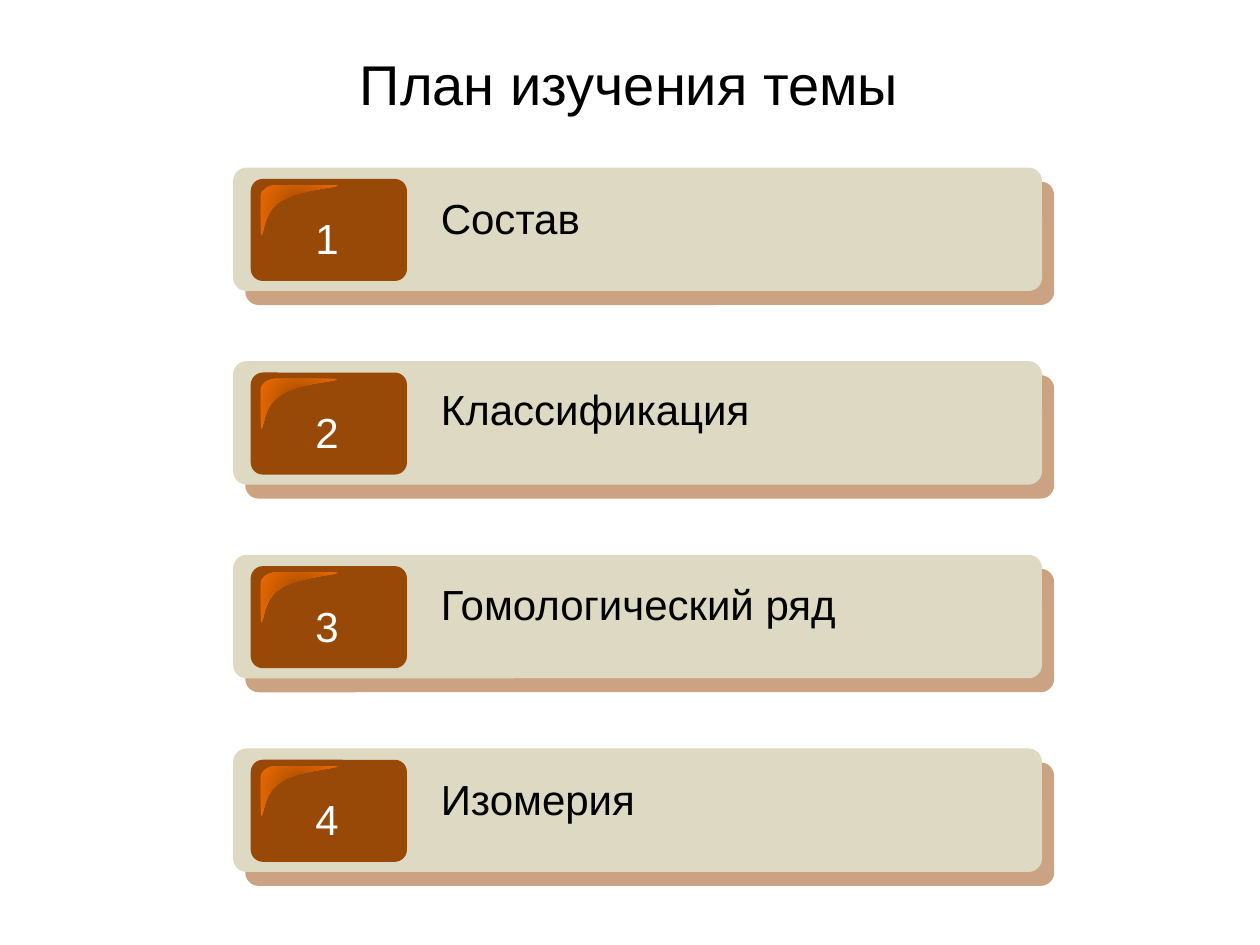
from typing import NamedTuple

from lxml.etree import SubElement
from pptx import Presentation
from pptx.dml.color import RGBColor
from pptx.enum.shapes import MSO_SHAPE as Preset
from pptx.enum.text import MSO_ANCHOR as Anchor, MSO_AUTO_SIZE as AutoSize, PP_ALIGN as Align
from pptx.oxml import parse_xml
from pptx.oxml.ns import nsdecls, qn
from pptx.util import Inches, Pt

BLACK = RGBColor(0x00, 0x00, 0x00)
WHITE = RGBColor(0xFF, 0xFF, 0xFF)
SAND = RGBColor(0xDD, 0xD9, 0xC3)
BROWN = RGBColor(0x98, 0x48, 0x07)
GLOSS_STOPS = (
    (0, RGBColor(0x8D, 0x40, 0x00)),
    (50, RGBColor(0xC8, 0x5B, 0x00)),
    (100, RGBColor(0xEE, 0x6B, 0x00)),
)


class Area(NamedTuple):
    """A place in inches; inside a row it is measured from the row's corner."""
    left: float
    top: float
    width: float
    height: float

    def in_row(self, row: int) -> "Area":
        return self._replace(left=ROW_LEFT + self.left,
                             top=FIRST_TOP + row * ROW_PITCH + self.top)

    def emu(self) -> list:
        return [Inches(value) for value in self]


class Topic(NamedTuple):
    text: str
    label_top: float


TOPICS = (
    Topic("Состав", 0.15),
    Topic("Классификация", 0.13),
    Topic("Гомологический ряд", 0.14),
    Topic("Изомерия", 0.15),
)
FIRST_TOP, LAST_TOP = 1.33, 5.94
ROW_PITCH = (LAST_TOP - FIRST_TOP) / (len(TOPICS) - 1)
ROW_LEFT = 1.85

TITLE = Area(1.95, 0.3, 6.09, 0.72)
BAR = Area(0, 0, 6.42, 0.98)
BADGE = Area(0.14, 0.09, 1.24, 0.81)
GLOSS = Area(0.22, 0.14, 0.62, 0.4)
NUMBER = Area(0.55, 0.31, 0.39, 0.51)
LABEL = Area(1.55, 0, 4.72, 0.51)

# Outline of the gloss from its own corner: a straight edge has one point,
# a Bézier curve has two handles and an end
GLOSS_START = (0.12, 0)
GLOSS_EDGES = (
    ((0.06, 0), (0, 0.04), (0, 0.08)),
    ((0, 0.4),),
    ((0.03, 0.4), (0.01, 0.21), (0.17, 0.12)),
    ((0.32, 0.03), (0.62, 0.02), (0.61, 0)),
)


def write(frame, text: str, *, size: float, color: RGBColor, align=Align.LEFT) -> None:
    para = frame.paragraphs[0]
    para.alignment = align
    span = para.add_run()
    span.text = text
    span.font.name = "Arial"
    span.font.size = Pt(size)
    span.font.color.rgb = color


def add_text(shapes, area: Area, text: str, *, wrap: bool, **style) -> None:
    frame = shapes.add_textbox(*area.emu()).text_frame
    frame.word_wrap = wrap
    frame.auto_size = AutoSize.SHAPE_TO_FIT_TEXT
    write(frame, text, size=24, **style)


def add_rounded(shapes, area: Area, color: RGBColor, rounding: float):
    box = shapes.add_shape(Preset.ROUNDED_RECTANGLE, *area.emu())
    box.adjustments[0] = rounding
    box.fill.solid()
    box.fill.fore_color.rgb = color
    box.line.fill.background()
    box.shadow.inherit = False
    return box


def cast_shadow(box, color: RGBColor) -> None:
    effects = box._element.spPr.find(qn("a:effectLst"))
    shadow = SubElement(effects, qn("a:outerShdw"), blurRad="0", dist=str(Pt(10.6)),
                        dir=str(49 * 60000), algn="ctr", rotWithShape="0")
    tint = SubElement(shadow, qn("a:srgbClr"), val=str(color))
    SubElement(tint, qn("a:alpha"), val="50000")


def add_gloss(shapes, area: Area) -> None:
    corners = [(Inches(area.left + x), Inches(area.top + y))
               for x, y in (GLOSS_START, *(edge[-1] for edge in GLOSS_EDGES))]
    builder = shapes.build_freeform(*corners[0])
    builder.add_line_segments(corners[1:], close=True)
    gloss = builder.convert_to_shape()
    gloss.line.fill.background()
    gloss.shadow.inherit = False
    geometry = gloss._element.spPr.find(qn("a:custGeom"))
    # Bend the curved edges
    for line, edge in zip(list(geometry.iter(qn("a:lnTo"))), GLOSS_EDGES):
        if len(edge) == 3:
            line.tag = qn("a:cubicBezTo")
            for place, (x, y) in enumerate(edge[:2]):
                handle = SubElement(line, qn("a:pt"), x=str(Inches(x)), y=str(Inches(y)))
                line.insert(place, handle)
    # Round gradient, spreading from the centre
    stops = "".join(f'<a:gs pos="{share * 1000}"><a:srgbClr val="{color}"/></a:gs>'
                    for share, color in GLOSS_STOPS)
    geometry.addnext(parse_xml(
        f'<a:gradFill {nsdecls("a")} rotWithShape="1"><a:gsLst>{stops}</a:gsLst>'
        '<a:path path="circle"><a:fillToRect l="50000" t="50000" r="50000" b="50000"/>'
        '</a:path></a:gradFill>'))


def add_topic(page, row: int, topic: Topic) -> None:
    shapes = page.shapes.add_group_shape().shapes
    bar = add_rounded(shapes, BAR.in_row(row), SAND, 0.109)
    cast_shadow(bar, BROWN)
    add_rounded(shapes, BADGE.in_row(row), BROWN, 0.119)
    add_gloss(shapes, GLOSS.in_row(row))
    add_text(shapes, NUMBER.in_row(row), str(row + 1), wrap=False,
             color=WHITE, align=Align.CENTER)
    label = LABEL._replace(top=topic.label_top)
    add_text(shapes, label.in_row(row), topic.text, wrap=True, color=BLACK)


def add_title(page, text: str) -> None:
    title = page.shapes.title
    title.left, title.top, title.width, title.height = TITLE.emu()
    outline = SubElement(title._element.spPr, qn("a:prstGeom"), prst="roundRect")
    SubElement(outline, qn("a:avLst"))
    title.text_frame.vertical_anchor = Anchor.MIDDLE
    write(title.text_frame, text, size=32, color=BLACK, align=Align.CENTER)
    # In front of the topics
    title._element.getparent().append(title._element)


def main() -> None:
    deck = Presentation()
    deck.slide_width, deck.slide_height = Inches(10), Inches(7.5)
    page = deck.slides.add_slide(deck.slide_layouts[5])

    # Numbered topics
    for row, topic in enumerate(TOPICS):
        add_topic(page, row, topic)

    add_title(page, "План изучения темы")
    deck.save("out.pptx")


if __name__ == "__main__":
    main()
